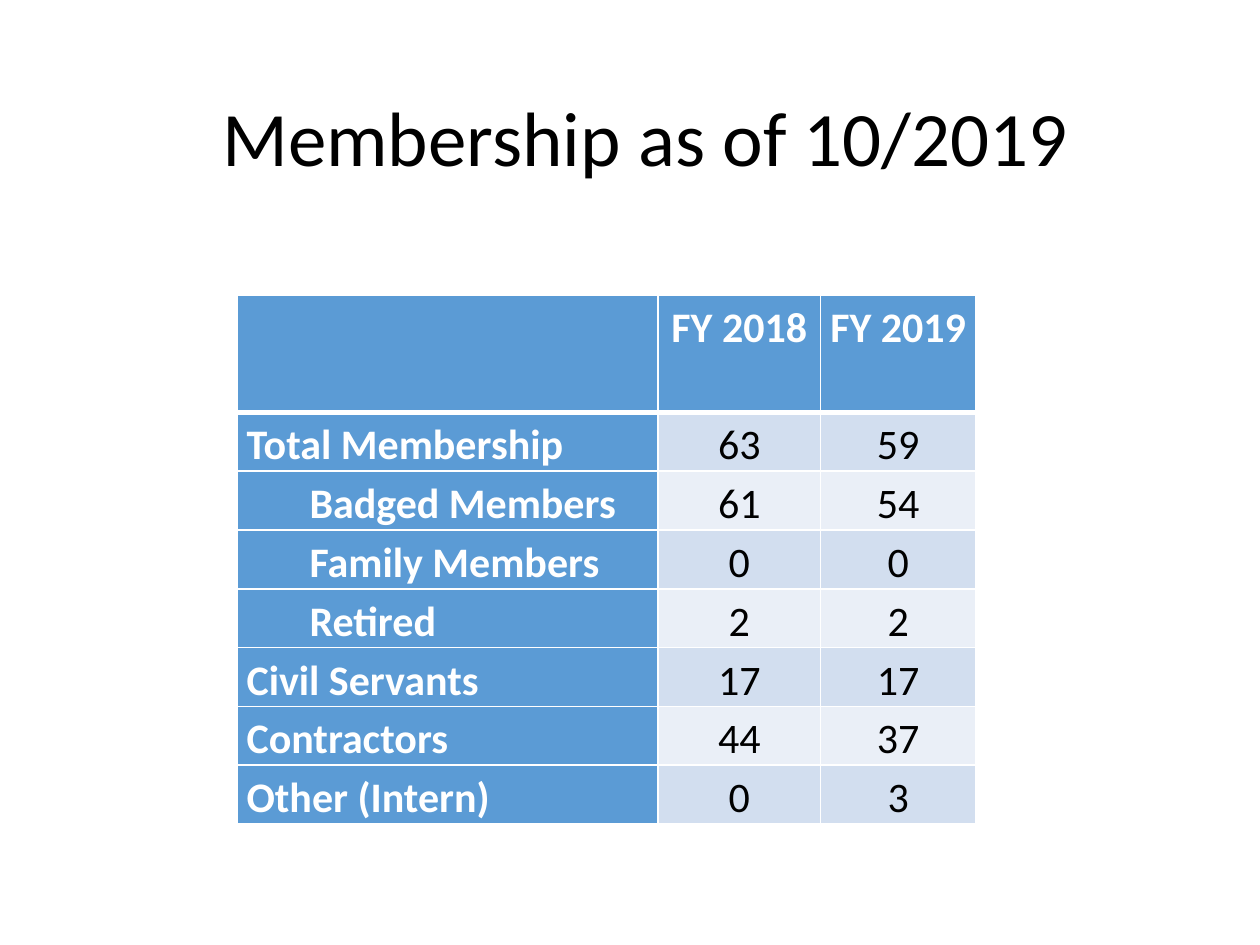
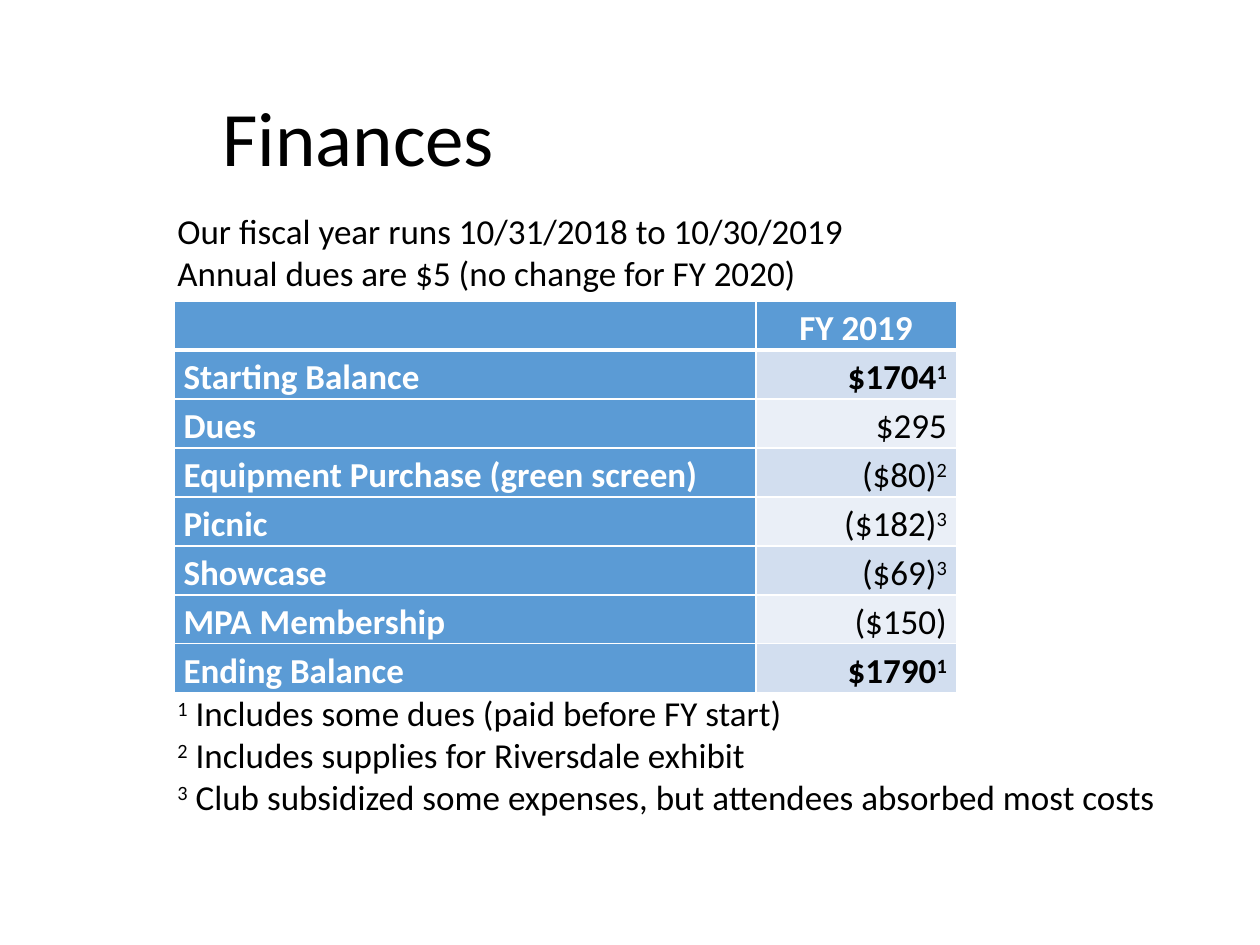
"""Build the membership and finances slides of a club report."""
from pptx import Presentation
from pptx.dml.color import RGBColor
from pptx.enum.text import MSO_ANCHOR as Anchor, PP_ALIGN as Align
from pptx.oxml.ns import qn
from pptx.util import Pt
from lxml.etree import SubElement

COLORS = {"text": "000000", "light": "FFFFFF", "header": "5B9BD5",
          "band_odd": "D2DEEF", "band_even": "EAEFF7"}
FONT = "Calibri"
TITLE_BOX = (120, 28.8, 550, 104.4)

MEMBERSHIP_ROWS = [
    ("", "FY 2018", "FY 2019"),
    ("Total Membership", "63", "59"),
    ("Badged Members", "61", "54"),
    ("Family Members", "0", "0"),
    ("Retired", "2", "2"),
    ("Civil Servants", "17", "17"),
    ("Contractors", "44", "37"),
    ("Other (Intern)", "0", "3"),
]
MEMBER_SUBGROUPS = {"Badged Members", "Family Members", "Retired"}

FINANCE_ROWS = [
    ("", "FY 2019"),
    ("Starting Balance", "$1704^1"),
    ("Dues", "$295"),
    ("Equipment Purchase (green screen)", "($80)^2"),
    ("Picnic", "($182)^3"),
    ("Showcase", "($69)^3"),
    ("MPA Membership", "($150)"),
    ("Ending Balance", "$1790^1"),
]
BALANCES = {"Starting Balance", "Ending Balance"}
FISCAL_YEAR = ["Our fiscal year runs 10/31/2018 to 10/30/2019",
               "Annual dues are $5 (no change for FY 2020)"]
FOOTNOTES = ["^1^ Includes some dues (paid before FY start)",
             "^2^ Includes supplies for Riversdale exhibit",
             "^3^ Club subsidized some expenses, but attendees absorbed most costs"]


def color(name):
    """Return the named colour of the palette."""
    return RGBColor.from_string(COLORS[name])


def write_paragraph(paragraph, text, size, ink="text", bold=False,
                    align=Align.LEFT, spacing=1.0):
    """Write text in which carets switch superscript on and off."""
    paragraph.alignment = align
    paragraph.line_spacing = spacing
    font = paragraph.font
    font.name, font.size, font.bold = FONT, Pt(size), bold
    font.color.rgb = color(ink)
    for position, part in enumerate(text.split("^")):
        if part:
            run = paragraph.add_run()
            run.text = part
            if position % 2:
                run.font.bold = bold
                run._r.get_or_add_rPr().set("baseline", "30000")


def add_text(slide, box, lines, size, anchor=Anchor.TOP, wrap=True, spacing=1.0):
    """Place a text box with one paragraph per line."""
    frame = slide.shapes.add_textbox(*map(Pt, box)).text_frame
    frame.word_wrap = wrap
    frame.vertical_anchor = anchor
    for index, line in enumerate(lines):
        paragraph = frame.add_paragraph() if index else frame.paragraphs[0]
        write_paragraph(paragraph, line, size, spacing=spacing)


def add_title(slide, text):
    """Place the slide title."""
    add_text(slide, TITLE_BOX, [text], 44, anchor=Anchor.MIDDLE, spacing=0.9)


def set_borders(cell, row_index):
    """Draw white cell borders, with a heavy rule below the header row."""
    heavy_side = {0: "lnB", 1: "lnT"}.get(row_index)
    properties = cell._tc.get_or_add_tcPr()
    for side in ("lnL", "lnR", "lnT", "lnB"):
        width = Pt(3 if side == heavy_side else 1)
        line = SubElement(properties, qn(f"a:{side}"), w=str(width))
        fill = SubElement(line, qn("a:solidFill"))
        SubElement(fill, qn("a:srgbClr"), val=COLORS["light"])


def add_report_table(slide, left, top, widths, rows, size, value_align,
                     header_lines=1, indented=(), emphasized=()):
    """Place a table with a blue header row and label column."""
    row_height = size * 1.4
    height = row_height * (len(rows) - 1 + header_lines)
    box = map(Pt, (left, top, sum(widths), height))
    table = slide.shapes.add_table(len(rows), len(widths), *box).table
    table.first_row = table.horz_banding = False
    for column, width in zip(table.columns, widths):
        column.width = Pt(width)
    for row_index, values in enumerate(rows):
        lines = 1 if row_index else header_lines
        table.rows[row_index].height = Pt(row_height * lines)
        band = "band_odd" if row_index % 2 else "band_even"
        label = values[0]
        for column_index, value in enumerate(values):
            cell = table.cell(row_index, column_index)
            heading = row_index == 0 or column_index == 0
            set_borders(cell, row_index)
            cell.fill.solid()
            cell.fill.fore_color.rgb = color("header" if heading else band)
            cell.margin_left = cell.margin_right = Pt(5.4)
            cell.margin_top = cell.margin_bottom = 0
            paragraph = cell.text_frame.paragraphs[0]
            if column_index == 0:
                align = Align.LEFT
                if label in indented:
                    paragraph.level = 1
                    paragraph._p.get_or_add_pPr().set("marL", str(Pt(36)))
            else:
                align = value_align if row_index else Align.CENTER
            write_paragraph(paragraph, value, size,
                            ink="light" if heading else "text",
                            bold=heading or label in emphasized,
                            align=align, spacing=1.15)


def build_membership(slide):
    """Fill the membership slide."""
    add_title(slide, "Membership as of 10/2019")
    add_report_table(slide, 135.5, 168.5, (240.5, 93, 88.5), MEMBERSHIP_ROWS, 24,
                     Align.CENTER, header_lines=2, indented=MEMBER_SUBGROUPS)


def build_finances(slide):
    """Fill the finances slide."""
    add_title(slide, "Finances")
    add_report_table(slide, 99.5, 172, (332.5, 114.5), FINANCE_ROWS, 20,
                     Align.RIGHT, emphasized=BALANCES)
    add_text(slide, (94.3, 116, 399, 55.4), FISCAL_YEAR, 20,
             anchor=Anchor.MIDDLE, wrap=False)
    add_text(slide, (94.3, 391.7, 576.7, 80), FOOTNOTES, 20)


def main():
    """Create and save the presentation."""
    presentation = Presentation()
    presentation.slide_width, presentation.slide_height = Pt(720), Pt(540)
    blank = presentation.slide_layouts[6]
    for build in (build_membership, build_finances):
        build(presentation.slides.add_slide(blank))
    presentation.save("out.pptx")


if __name__ == "__main__":
    main()
